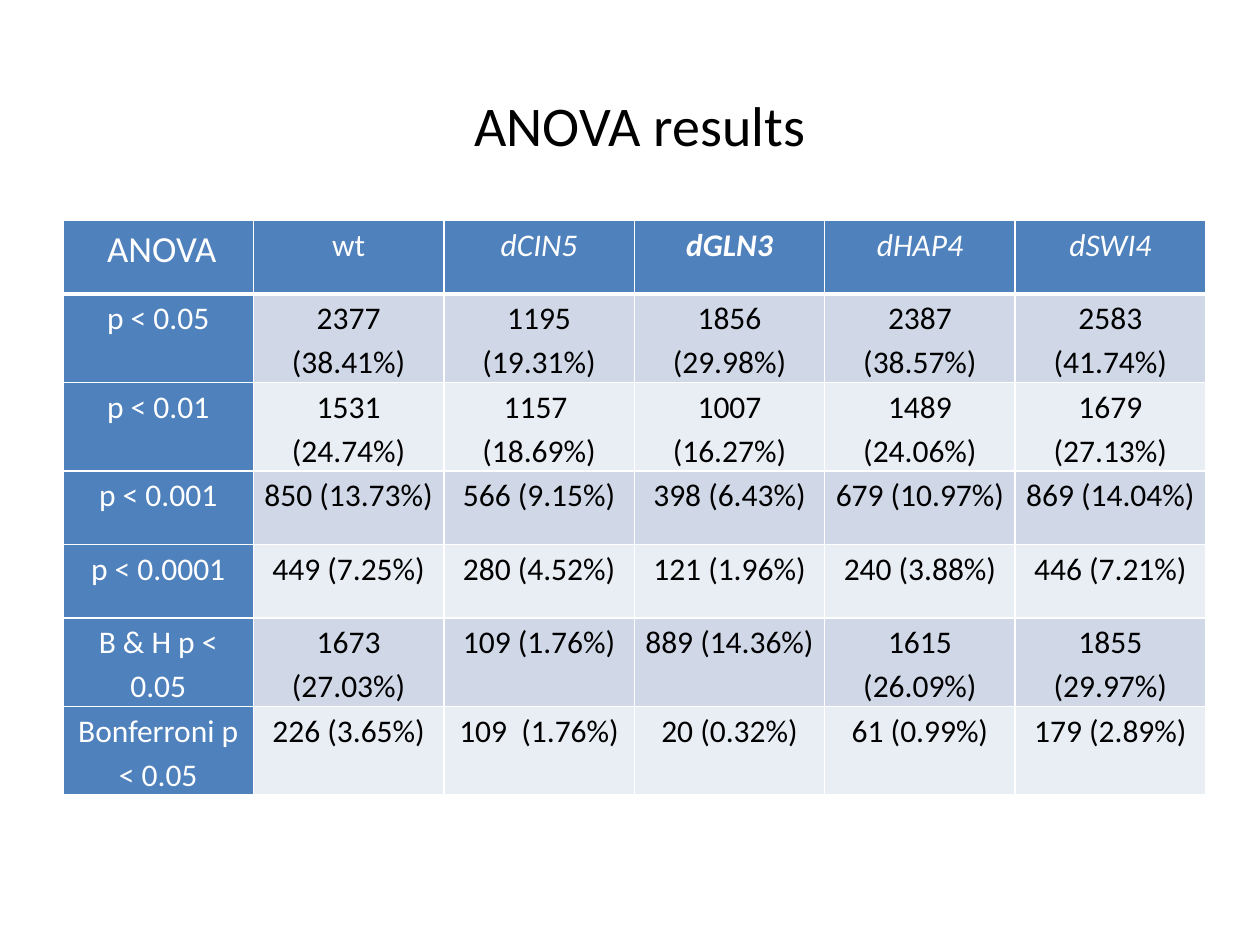
import pptx
import pptx.dml.color
import pptx.enum.text
import pptx.oxml.ns
import pptx.util
import lxml.etree

Pt = pptx.util.Pt
RGB = pptx.dml.color.RGBColor
ALIGN = pptx.enum.text.PP_ALIGN
qn = pptx.oxml.ns.qn

BLACK = RGB(0, 0, 0)
WHITE = RGB(0xFF, 0xFF, 0xFF)
BLUE = RGB(0x4F, 0x81, 0xBD)
BANDS = (RGB(0xD0, 0xD8, 0xE8), RGB(0xE9, 0xED, 0xF4))

HEADS = ["ANOVA", "wt", "dCIN5", "dGLN3", "dHAP4", "dSWI4"]
ROWS = [
    ["p < 0.05", "2377 (38.41%)", "1195 (19.31%)", "1856 (29.98%)", "2387 (38.57%)", "2583 (41.74%)"],
    ["p < 0.01", "1531 (24.74%)", "1157  (18.69%)", "1007 (16.27%)", "1489 (24.06%)", "1679 (27.13%)"],
    ["p < 0.001", "850 (13.73%)", "566 (9.15%)", "398 (6.43%)", "679 (10.97%)", "869 (14.04%)"],
    ["p < 0.0001", "449 (7.25%)", "280 (4.52%)", "121 (1.96%)", "240 (3.88%)", "446 (7.21%)"],
    ["B & H p < 0.05", "1673 (27.03%)", "109 (1.76%)", "889 (14.36%)", "1615 (26.09%)", "1855 (29.97%)"],
    ["Bonferroni p < 0.05", "226 (3.65%)", "109  (1.76%)", "20 (0.32%)", "61 (0.99%)", "179 (2.89%)"],
]


def write(para, text, size=18, color=BLACK, bold=False, italic=False, face="Calibri"):
    run = para.add_run()
    run.text = text
    font = run.font
    font.name, font.size = face, Pt(size)
    font.bold, font.italic = bold, italic
    font.color.rgb = color


def edge(cell, side, width):
    props = cell._tc.get_or_add_tcPr()
    line = lxml.etree.SubElement(props, qn(f"a:ln{side}"), w=str(Pt(width)))
    fill = lxml.etree.SubElement(line, qn("a:solidFill"))
    lxml.etree.SubElement(fill, qn("a:srgbClr"), val=str(WHITE))


class Page:
    def __init__(self, deck):
        self.slide = deck.slides.add_slide(deck.slide_layouts[6])
        self.inset = 5.1
        self.lead = 1.15

    def title(self, text, left, top, width, height):
        box = self.slide.shapes.add_textbox(Pt(left), Pt(top), Pt(width), Pt(height))
        frame = box.text_frame
        frame.word_wrap = False
        frame.auto_size = pptx.enum.text.MSO_AUTO_SIZE.SHAPE_TO_FIT_TEXT
        write(frame.paragraphs[0], text, size=32)

    def cell(self, cell, text, row, col):
        cell.margin_left = cell.margin_right = Pt(self.inset)
        cell.margin_top = cell.margin_bottom = 0
        for side in "LRTB":
            edge(cell, side, 3 if row == 0 and side == "B" else 1)
        label = row == 0 or col == 0
        cell.fill.solid()
        cell.fill.fore_color.rgb = BLUE if label else BANDS[(row - 1) % 2]
        para = cell.text_frame.paragraphs[0]
        para.alignment = ALIGN.CENTER
        para.line_spacing = self.lead
        corner = row == 0 and col == 0
        if corner:
            write(para, " ")
        write(para, text, size=21 if corner else 18,
              color=WHITE if label else BLACK,
              bold=text == "dGLN3", italic=row == 0 and col > 1)

    def table(self, data, left, top, width, height):
        rows, cols = len(data), len(data[0])
        grid = self.slide.shapes.add_table(
            rows, cols, Pt(left), Pt(top), Pt(width * cols), Pt(height * rows)).table
        for column in grid.columns:
            column.width = Pt(width)
        for row, line in enumerate(data):
            grid.rows[row].height = Pt(height)
            for col, text in enumerate(line):
                self.cell(grid.cell(row, col), text, row, col)


def main():
    deck = pptx.Presentation()
    deck.slide_width, deck.slide_height = Pt(720), Pt(540)
    page = Page(deck)
    page.table([HEADS] + ROWS, 36, 126, 108.85, 42)
    page.title("ANOVA results", 264, 48, 205, 46)
    deck.save("out.pptx")


if __name__ == "__main__":
    main()
